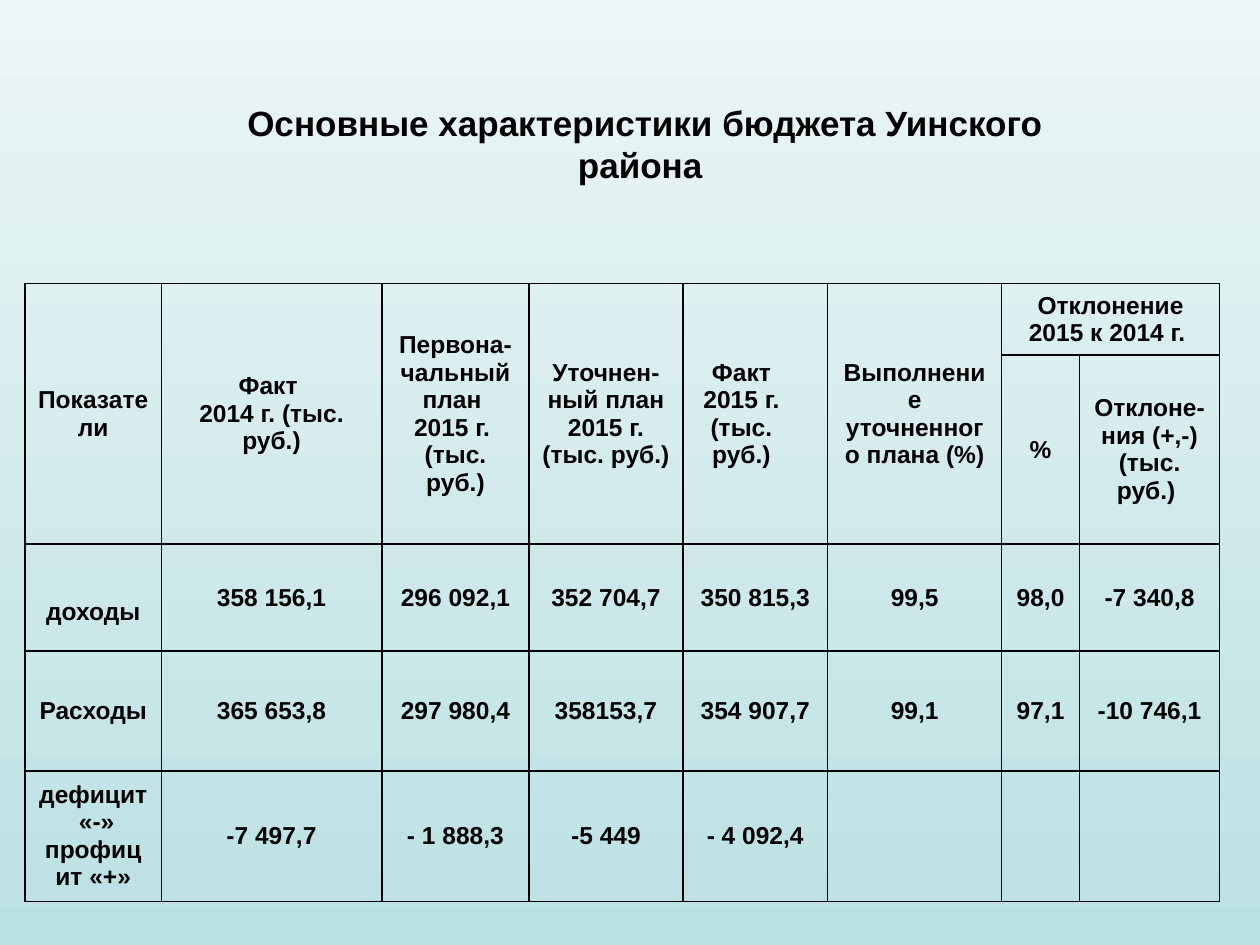
"""Build a slide with the main figures of a district budget in one table."""
from dataclasses import dataclass

from lxml.etree import SubElement
from pptx import Presentation
from pptx.dml.color import RGBColor as RGB
from pptx.enum.text import MSO_ANCHOR as ANCHOR, MSO_AUTO_SIZE as AUTO, PP_ALIGN as ALIGN
from pptx.oxml.ns import qn
from pptx.util import Inches, Pt

COLORS = {"text": "000000", "border": "000000", "top": "ECF6F6", "bottom": "BBE0E3"}
FONT = "Arial"
SLIDE_W, SLIDE_H = 10, 7.5
ROW_HEIGHTS = [0.52, 1.23, 0.85, 0.95, 0.91]
HEADER_ROWS = 2
LINE = 0.22


@dataclass
class Box:
    """Position and size as shares of the slide."""
    x: float
    y: float
    w: float
    h: float

    def emu(self) -> tuple:
        return (Inches(self.x * SLIDE_W), Inches(self.y * SLIDE_H),
                Inches(self.w * SLIDE_W), Inches(self.h * SLIDE_H))


@dataclass
class Column:
    """A table column: width in inches, heading and one value per body row."""
    width: float
    heading: str
    values: tuple
    group: str = ""


GROUP = "Отклонение 2015 к 2014 г. "
COLUMNS = [
    Column(1.08, "Показатели", ("доходы", "Расходы", "дефицит\n «-»\nпрофицит «+»")),
    Column(1.75, "Факт \n2014 г. (тыс. руб.)", ("358 156,1", "365 653,8", "-7 497,7")),
    Column(1.17, "Первона-чальный план \n2015 г. \n(тыс. руб.)",
           ("296 092,1", "297 980,4", "- 1 888,3")),
    Column(1.22, "Уточнен-ный план 2015 г. (тыс. руб.)", ("352 704,7", "358153,7", "-5 449")),
    Column(1.15, "Факт\n2015 г. (тыс. руб.)", ("350 815,3", "354 907,7", "- 4 092,4")),
    Column(1.38, "Выполнение уточненного плана (%)", ("99,5", "99,1", "")),
    Column(0.62, "%", ("98,0", "97,1", ""), GROUP),
    Column(1.11, "Отклоне-ния (+,-) (тыс. руб.) ", ("-7 340,8", "-10 746,1", ""), GROUP),
]
TITLE_BOX = Box(0.146, 0.101, 0.732, 0.103)
TABLE_BOX = Box(0.02, 0.3, 0.949, 0.617)


def write(tf, text: str, size: float) -> None:
    """Set centred bold text, one paragraph per line."""
    tf.text = text
    for p in tf.paragraphs:
        p.alignment = ALIGN.CENTER
        p.font.size = Pt(size)
        for r in p.runs:
            r.font.name, r.font.size, r.font.bold = FONT, Pt(size), True
            r.font.color.rgb = RGB.from_string(COLORS["text"])


def add_borders(cell) -> None:
    """Draw a one-point line on each side of a cell."""
    props = cell._tc.get_or_add_tcPr()
    for i, side in enumerate(("lnL", "lnR", "lnT", "lnB")):
        ln = props.makeelement(qn(f"a:{side}"), {"w": str(Pt(1))})
        fill = SubElement(ln, qn("a:solidFill"))
        SubElement(fill, qn("a:srgbClr"), val=COLORS["border"])
        props.insert(i, ln)


def add_background(slide) -> None:
    """Fill the slide with a vertical gradient."""
    fill = slide.background.fill
    fill.gradient()
    fill.gradient_angle = 270
    for stop, position, name in zip(fill.gradient_stops, (0, 1), ("top", "bottom")):
        stop.position = position
        stop.color.rgb = RGB.from_string(COLORS[name])


def add_title(slide, text: str, box: Box) -> None:
    """Move and format the title placeholder."""
    sp = slide.shapes.title
    sp.left, sp.top, sp.width, sp.height = box.emu()
    tf = sp.text_frame
    tf.word_wrap, tf.auto_size = True, AUTO.SHAPE_TO_FIT_TEXT
    tf.vertical_anchor = ANCHOR.TOP
    write(tf, text, 20)


def add_budget_table(slide, columns: list[Column], box: Box) -> None:
    """Add the table with merged headings and plain bordered cells."""
    frame = slide.shapes.add_table(len(ROW_HEIGHTS), len(columns), *box.emu())
    table = frame.table
    table.first_row = table.horz_banding = False
    for row, height in zip(table.rows, ROW_HEIGHTS):
        row.height = Inches(height)
    for c, column in enumerate(columns):
        table.columns[c].width = Inches(column.width)
        heads = (column.group, column.heading) if column.group else (column.heading, "")
        if c and column.group and column.group == columns[c - 1].group:
            heads = ("", column.heading)
        for r, text in enumerate(heads + column.values):
            cell = table.cell(r, c)
            cell.fill.background()
            cell.vertical_anchor = ANCHOR.MIDDLE
            write(cell.text_frame, text, 14)
            add_borders(cell)
        if not column.group:
            table.cell(0, c).merge(table.cell(HEADER_ROWS - 1, c))
    grouped = [c for c, column in enumerate(columns) if column.group]
    table.cell(0, grouped[0]).merge(table.cell(0, grouped[-1]))
    table.cell(HEADER_ROWS, 0).margin_top = Inches(0.05 + LINE)
    fact = table.cell(0, 4).text_frame.paragraphs[0]
    fact._p.get_or_add_pPr().set("marR", str(Inches(LINE)))
    frame.height = box.emu()[3]


def main() -> None:
    """Build and save the slide."""
    prs = Presentation()
    prs.slide_width, prs.slide_height = Inches(SLIDE_W), Inches(SLIDE_H)
    slide = prs.slides.add_slide(prs.slide_layouts[5])
    add_background(slide)
    add_budget_table(slide, COLUMNS, TABLE_BOX)
    add_title(slide, "Основные характеристики бюджета Уинского района ", TITLE_BOX)
    prs.save("out.pptx")


if __name__ == "__main__":
    main()
